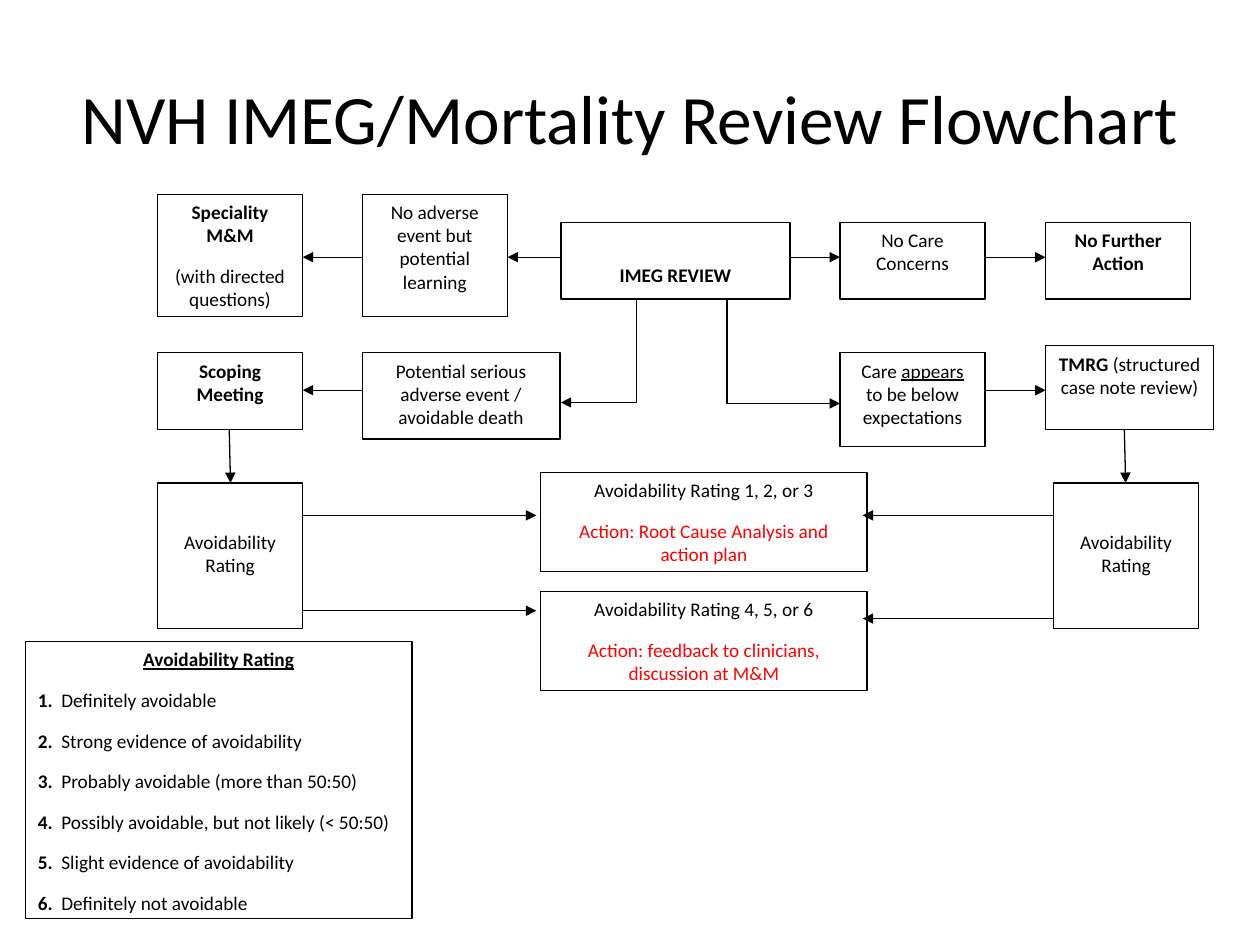
from lxml import etree
from pptx import Presentation
from pptx.dml.color import RGBColor
from pptx.enum import shapes, text
from pptx.oxml.ns import qn
from pptx.util import Pt

BLACK = RGBColor(0, 0, 0)
WHITE = RGBColor(255, 255, 255)
RED = RGBColor(255, 0, 0)
FONT = "Calibri"

COL_1, COL_2, COL_3, COL_4 = 90, 207, 480, 597.5
BOX_W, BOX_H = 83, 44
TOP_Y, SIDE_Y, MID_Y, RATING_Y = 127, 111, 201.5, 276
RATING_X, OUTCOME_X, OUTCOME_W = 602, 309, 186.5
REVIEW_X, REVIEW_W = 320.5, 131

RATINGS = [
    "Definitely avoidable",
    "Strong evidence of avoidability",
    "Probably avoidable (more than 50:50)",
    "Possibly avoidable, but not likely (< 50:50)",
    "Slight evidence of avoidability",
    "Definitely not avoidable",
]


def set_paragraph(p, size, color):
    p.alignment = text.PP_ALIGN.CENTER
    p.font.name, p.font.size = FONT, Pt(size)
    p.font.color.rgb = color


def add_title(s, words):
    tf = s.shapes.add_textbox(Pt(36), Pt(21.6), Pt(648), Pt(90)).text_frame
    tf.word_wrap = True
    tf.vertical_anchor = text.MSO_ANCHOR.MIDDLE
    p = tf.paragraphs[0]
    p.text = words
    set_paragraph(p, 39.6, BLACK)


def add_paragraph(tf, runs, color=BLACK):
    p = tf.paragraphs[0] if not tf.paragraphs[0].runs else tf.add_paragraph()
    set_paragraph(p, 11, color)
    p.space_after = Pt(10)
    for words, style in runs:
        r = p.add_run()
        r.text = words
        r.font.color.rgb = color
        if "b" in style:
            r.font.bold = True
        if "u" in style:
            r.font.underline = True
    return p


def add_box(s, x, y, w, h, *runs, top=3.6):
    sp = s.shapes.add_shape(shapes.MSO_SHAPE.RECTANGLE, Pt(x), Pt(y), Pt(w), Pt(h))
    sp.shadow.inherit = False
    sp.fill.solid()
    sp.fill.fore_color.rgb = WHITE
    sp.line.color.rgb = BLACK
    sp.line.width = Pt(0.75)
    tf = sp.text_frame
    tf.word_wrap = True
    tf.vertical_anchor = text.MSO_ANCHOR.TOP
    tf.margin_top = Pt(top)
    add_paragraph(tf, runs)
    return tf


def add_outcome(s, y, rating, action):
    tf = add_box(s, OUTCOME_X, y, OUTCOME_W, 56.5, (rating, ""))
    add_paragraph(tf, [(action, "")], RED)


def add_rating_key(s):
    tf = add_box(s, 14.5, 366.5, 221, 158.5, ("Avoidability Rating", "bu"))
    for number, meaning in enumerate(RATINGS, 1):
        p = add_paragraph(tf, [(f"{number}.\t", "b"), (meaning, "")])
        p.alignment = text.PP_ALIGN.LEFT
        pPr = p._p.get_or_add_pPr()
        pPr.set("marL", str(Pt(13.5)))
        pPr.set("indent", str(-Pt(13.5)))


def add_arrow(s, x1, y1, x2, y2, kind=shapes.MSO_CONNECTOR.STRAIGHT):
    c = s.shapes.add_connector(kind, Pt(x1), Pt(y1), Pt(x2), Pt(y2))
    c.line.color.rgb = BLACK
    c.line.width = Pt(0.75)
    spPr = c._element.spPr
    etree.SubElement(spPr.find(qn("a:ln")), qn("a:tailEnd"), type="triangle")
    etree.SubElement(spPr, qn("a:effectLst"))
    return c


def add_elbow(s, x1, y1, x2, y2):
    c = add_arrow(s, x1, y1, x2, y2, shapes.MSO_CONNECTOR.ELBOW)
    geom = c._element.spPr.find(qn("a:prstGeom"))
    av = geom.find(qn("a:avLst"))
    if av is None:
        av = etree.SubElement(geom, qn("a:avLst"))
    etree.SubElement(av, qn("a:gd"), name="adj1", fmla="val 1500")


def add_boxes(s):
    add_box(s, REVIEW_X, TOP_Y, REVIEW_W, BOX_H, ("IMEG REVIEW", "b"), top=23.4)
    add_box(s, COL_3, TOP_Y, BOX_W, BOX_H, ("No Care Concerns", ""))
    add_box(s, COL_4, TOP_Y, BOX_W, BOX_H, ("No Further Action", "b"))
    add_box(s, COL_3, MID_Y, BOX_W, 53.5,
            ("Care ", ""), ("appears", "u"), (" to be below expectations", ""))
    add_box(s, COL_2, MID_Y, 113, 49.5,
            ("Potential serious adverse event / avoidable death", ""))
    add_box(s, COL_4, 197.5, 96, 48,
            ("TMRG ", "b"), ("(structured case note review)", ""))
    add_box(s, COL_1, MID_Y, BOX_W, BOX_H, ("Scoping Meeting", "b"))
    for x in (COL_1, RATING_X):
        add_box(s, x, RATING_Y, BOX_W, BOX_W, ("Avoidability Rating", ""), top=27)
    add_outcome(s, 270, "Avoidability Rating 1, 2, or 3",
                "Action: Root Cause Analysis and action plan")
    add_outcome(s, 338, "Avoidability Rating 4, 5, or 6",
                "Action: feedback to clinicians, discussion at M&M")
    add_rating_key(s)
    add_box(s, COL_2, SIDE_Y, BOX_W, 70,
            ("No adverse event but potential learning", ""))
    tf = add_box(s, COL_1, SIDE_Y, BOX_W, 70, ("Speciality M&M", "b"))
    add_paragraph(tf, [("(with directed questions)", "")])


def add_arrows(s):
    left_edge, right_edge = COL_1 + BOX_W, COL_3 + BOX_W
    review_end = REVIEW_X + REVIEW_W
    top, middle = 147, 223
    add_arrow(s, REVIEW_X, top, COL_2 + BOX_W, top)
    add_arrow(s, review_end, top, COL_3, top)
    for y in (top, middle):
        add_arrow(s, COL_2, y, left_edge, y)
        add_arrow(s, right_edge, y, COL_4, y)
    for x in (131, 642.5):
        add_arrow(s, x, 245.5, x + 0.75, RATING_Y)
    for left_y, right_y in ((294.5, 294.5), (349, 353.5)):
        add_arrow(s, left_edge, left_y, 306.5, left_y)
        add_arrow(s, RATING_X, right_y, 493, right_y)
    add_elbow(s, 414.5, TOP_Y + BOX_H, COL_3, 230.5)
    add_elbow(s, 364.5, TOP_Y + BOX_H, REVIEW_X, 230)


def main():
    prs = Presentation()
    prs.slide_width, prs.slide_height = Pt(720), Pt(540)
    s = prs.slides.add_slide(prs.slide_layouts[6])
    add_title(s, "NVH IMEG/Mortality Review Flowchart")
    add_boxes(s)
    add_arrows(s)
    prs.save("out.pptx")


if __name__ == "__main__":
    main()
